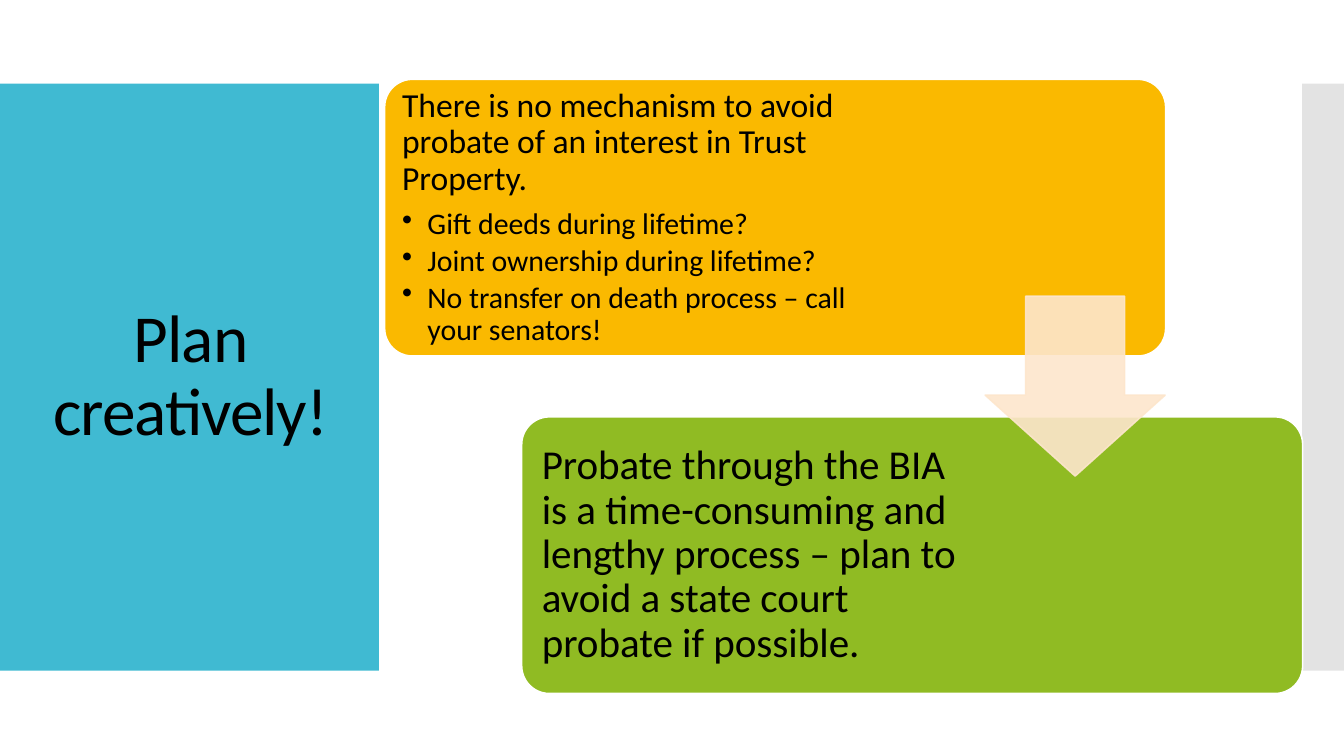
from lxml.etree import SubElement
from pptx import Presentation
from pptx.dml.color import RGBColor
from pptx.enum.shapes import MSO_SHAPE
from pptx.enum.text import MSO_ANCHOR, PP_ALIGN
from pptx.oxml.ns import qn
from pptx.util import Cm, Pt

COLORS = {
    "blue": "40BAD2",
    "grey": "C8C8C8",
    "gold": "FAB900",
    "green": "90BB23",
    "peach": "FDE6CC",
    "white": "FFFFFF",
    "black": "000000",
}
FONT = "Calibri"
CARD_W, CARD_H, PAD = 14.76, 5.23, 0.15


def paint(fill, color, alpha=100):
    """Fill with a named colour at an opacity in percent."""
    fill.solid()
    fill.fore_color.rgb = RGBColor.from_string(COLORS[color])
    if alpha < 100:
        tone = fill._xPr.find(qn("a:solidFill"))[0]
        SubElement(tone, qn("a:alpha"), val=str(alpha * 1000))


def add_shape(slide, kind, box, color, line=None, alpha=100, adjust=()):
    shape = slide.shapes.add_shape(kind, *map(Cm, box))
    shape.shadow.inherit = False
    for i, value in enumerate(adjust):
        shape.adjustments[i] = value
    paint(shape.fill, color, alpha)
    if line:
        paint(shape.line.fill, line, alpha)
        shape.line.width = Pt(0.85)
    else:
        shape.line.fill.background()
    return shape


def add_frame(slide, box, inset=None):
    """Add a wrapping, vertically centred text box; return its text frame."""
    frame = slide.shapes.add_textbox(*map(Cm, box)).text_frame
    frame.word_wrap = True
    frame.vertical_anchor = MSO_ANCHOR.MIDDLE
    if inset is not None:
        frame.margin_left = frame.margin_right = Cm(inset)
        frame.margin_top = frame.margin_bottom = Cm(inset)
    return frame


def style(para, size, after=0):
    """Format a paragraph; after is the gap below as a share of the size."""
    para.line_spacing = 0.9
    para.space_after = Pt(size * after)
    for run in para.runs:
        run.font.name = FONT
        run.font.size = Pt(size)
        run.font.color.rgb = RGBColor.from_string(COLORS["black"])


def add_bullet(para):
    props = para._p.get_or_add_pPr()
    indent = Cm(0.48)
    props.set("marL", str(indent))
    props.set("indent", str(-indent))
    SubElement(props, qn("a:buChar"), char="•")


def add_title(slide, text):
    frame = add_frame(slide, (0.53, 2.34, 6.15, 9.58))
    frame.text = text
    para = frame.paragraphs[0]
    para.alignment = PP_ALIGN.CENTER
    style(para, 36)
    for run in para.runs:
        run.font._element.set("spc", "-50")


def add_card(slide, left, top, color, width, inset, size, text, points=()):
    """Add a rounded card with a lead text and optional bullet points."""
    add_shape(slide, MSO_SHAPE.ROUNDED_RECTANGLE, (left, top, CARD_W, CARD_H),
              color, "white", adjust=(0.1,))
    box = (left + PAD, top + PAD, width, CARD_H - 2 * PAD)
    frame = add_frame(slide, box, inset)
    frame.text = text
    style(frame.paragraphs[0], size, 0.35)
    for point in points:
        para = frame.add_paragraph()
        para.text = point
        para.level = 1
        style(para, 16, 0.15)
        add_bullet(para)


def main():
    deck = Presentation()
    deck.slide_width, deck.slide_height = Cm(25.4), Cm(14.29)
    slide = deck.slides.add_slide(deck.slide_layouts[6])

    add_shape(slide, MSO_SHAPE.RECTANGLE, (0, 1.58, 7.16, 11.1), "blue")
    add_shape(slide, MSO_SHAPE.RECTANGLE, (24.61, 1.58, 0.79, 11.1), "grey",
              alpha=50)
    add_title(slide, "Plan creatively!")
    add_card(slide, 7.27, 1.5, "gold", 9.37, 0.18, 18,
             "There is no mechanism to avoid probate of an interest in Trust "
             "Property.",
             ("Gift deeds during lifetime?",
              "Joint ownership during lifetime?",
              "No transfer on death process – call your senators!"))
    add_card(slide, 9.86, 7.88, "green", 8.46, 0.23, 22,
             "Probate through the BIA is a time-consuming and lengthy process "
             "– plan to avoid a state court probate if possible.")
    add_shape(slide, MSO_SHAPE.DOWN_ARROW, (18.62, 5.6, 3.4, 3.4), "peach",
              "peach", 90, (0.55, 0.45))
    deck.save("out.pptx")


if __name__ == "__main__":
    main()
